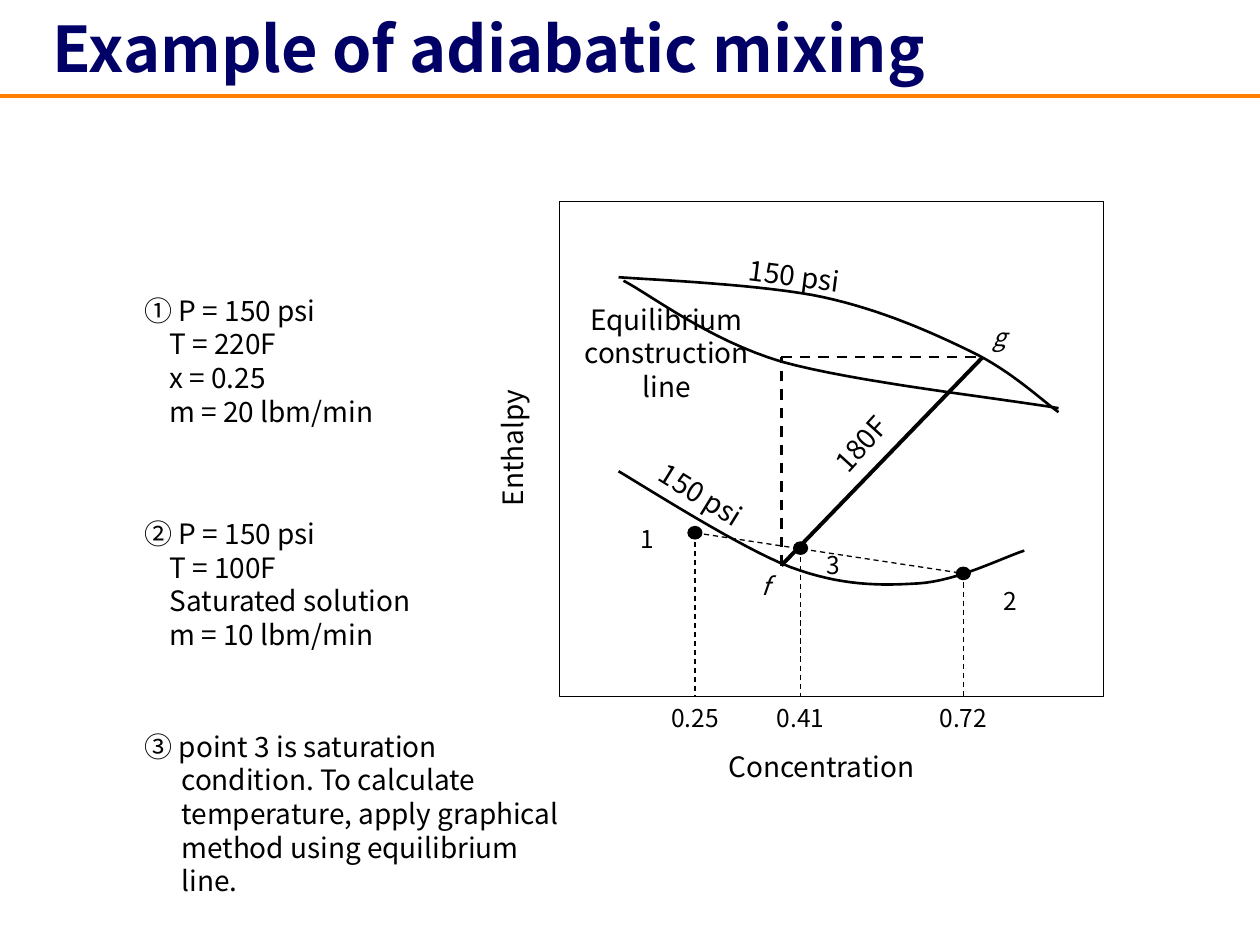
import pptx
import pptx.dml.color
import pptx.enum.dml
import pptx.enum.shapes
import pptx.enum.text
import pptx.oxml
import pptx.oxml.ns
import pptx.util
from pptx.util import Cm

FONT = "Noto Sans CJK KR"
BLACK = pptx.dml.color.RGBColor(0x00, 0x00, 0x00)
NAVY = pptx.dml.color.RGBColor(0x00, 0x00, 0x66)
ORANGE = pptx.dml.color.RGBColor(0xFF, 0x80, 0x00)
LEFT = pptx.enum.text.PP_ALIGN.LEFT
CENTER = pptx.enum.text.PP_ALIGN.CENTER

# All positions and sizes are in centimetres.
TITLE = "Example of adiabatic mixing"
NOTES_LEFT = 2.67
# top, width, hanging indent, lines
NOTES = [
    (5.79, 5.6, 0.5, ["① P = 150 psi", "T = 220F", "x = 0.25", "m = 20 lbm/min"]),
    (10.29, 6.2, 0.5, ["② P = 150 psi", "T = 100F", "Saturated solution",
                       "m = 10 lbm/min"]),
    (14.58, 9.04, 0.74, ["③ point 3 is saturation condition. To calculate temperature, "
                         "apply graphical method using equilibrium line."]),
]

FRAME = (11.28, 4.06, 10.97, 9.98)
FRAME_BOTTOM = FRAME[1] + FRAME[3]

# Each curve: a start point, then two controls and an end per Bezier segment
CURVES = [
    [(12.47, 9.5), (13.03, 9.83), (14.94, 11.05), (15.93, 11.43),
     (16.94, 11.81), (17.75, 11.81), (18.52, 11.76),
     (19.3, 11.71), (20.19, 11.25), (20.65, 11.1)],
    [(12.47, 5.59), (13.16, 5.64), (15.42, 5.74), (16.59, 5.99),
     (17.78, 6.25), (18.8, 6.71), (19.58, 7.09),
     (20.37, 7.47), (20.98, 8.05), (21.34, 8.31)],
    [(12.57, 5.66), (13.11, 5.94), (14.3, 6.86), (15.75, 7.29),
     (17.2, 7.7), (20.17, 8.03), (21.34, 8.23)],
]

# centre of the state point, concentration, number, centre of the number
STATES = [
    ((14.01, 10.74), "0.25", "1", (13.04, 10.86)),
    ((19.42, 11.56), "0.72", "2", (20.36, 12.1)),
    ((16.14, 11.05), "0.41", "3", (16.8, 11.39)),
]
MARKER = (0.28, 0.25)

LIQUID_F = (15.75, 11.4)
VAPOR_G = (19.81, 7.2)
CORNER = (LIQUID_F[0], VAPOR_G[1])

# lines, centre, width, rotation, size, italic
LABELS = [
    (["Concentration"], (16.56, 15.46), 8.74, 0, 16, False),
    (["Enthalpy"], (10.34, 9.03), 8.74, 270, 16, False),
    (["150 psi"], (14.14, 9.97), 2.46, 31.9, 16, False),
    (["150 psi"], (16.01, 5.55), 2.46, 7.3, 16, False),
    (["180F"], (17.35, 8.95), 1.83, 312.3, 16, False),
    (["Equilibrium", "construction", "line"], (13.44, 7.11), 4.22, 0, 16, False),
    (["f"], (15.43, 11.8), 1.14, 0, 14, True),
    (["g"], (20.15, 6.79), 1.14, 0, 14, True),
]

deck = pptx.Presentation()
deck.slide_width, deck.slide_height = Cm(25.4), Cm(19.05)
page = deck.slides.add_slide(deck.slide_layouts[6])


def text_height(line_count, size):
    """Height in cm of a box with its top and bottom insets."""
    return round(line_count * size * 1.2 * 2.54 / 72 + 0.25, 2)


def add_text(lines, left, top, width, height, size, align=LEFT, color=BLACK,
             bold=False, italic=False, hanging=0, rotation=0):
    box = page.shapes.add_textbox(Cm(left), Cm(top), Cm(width), Cm(height))
    box.rotation = rotation
    frame = box.text_frame
    frame.word_wrap = True
    para = frame.paragraphs[0]
    para.alignment = align
    para.line_spacing = pptx.util.Pt(size * 1.2)
    if hanging:
        properties = para._p.get_or_add_pPr()
        properties.set("marL", str(Cm(hanging)))
        properties.set("indent", str(-Cm(hanging)))
    for index, line in enumerate(lines):
        if index:
            para.add_line_break()
        span = para.add_run()
        span.text = line
        span.font.name = FONT
        span.font.size = pptx.util.Pt(size)
        span.font.bold = bold
        span.font.italic = italic
        span.font.color.rgb = color
        east_asian = pptx.oxml.parse_xml(
            f'<a:ea {pptx.oxml.ns.nsdecls("a")} typeface="{FONT}"/>')
        span.font._element.find(pptx.oxml.ns.qn("a:latin")).addnext(east_asian)
    return box


def add_label(lines, center, width, size, rotation=0, italic=False):
    height = text_height(len(lines), size)
    add_text(lines, center[0] - width / 2, center[1] - height / 2, width, height,
             size, CENTER, italic=italic, rotation=rotation)


def add_line(start, end, weight, color=BLACK, dashed=False):
    line = page.shapes.add_connector(pptx.enum.shapes.MSO_CONNECTOR.STRAIGHT,
                                     *map(Cm, start + end))
    line.line.color.rgb = color
    line.line.width = pptx.util.Pt(weight)
    if dashed:
        line.line.dash_style = pptx.enum.dml.MSO_LINE.DASH
    line._element.spPr.append(
        pptx.oxml.parse_xml(f'<a:effectLst {pptx.oxml.ns.nsdecls("a")}/>'))


def style_shape(shape, weight, filled=False):
    shape.shadow.inherit = False
    if filled:
        shape.fill.solid()
        shape.fill.fore_color.rgb = BLACK
    else:
        shape.fill.background()
    shape.line.color.rgb = BLACK
    shape.line.width = pptx.util.Pt(weight)


def bezier_points(nodes, steps=16):
    """Sample a chain of cubic Bezier segments, without its start point."""
    for first in range(0, len(nodes) - 1, 3):
        for step in range(1, steps + 1):
            t = step / steps
            weights = ((1 - t) ** 3, 3 * t * (1 - t) ** 2, 3 * t * t * (1 - t), t ** 3)
            yield tuple(Cm(sum(w * node[axis] for w, node
                               in zip(weights, nodes[first:first + 4])))
                        for axis in (0, 1))


add_line((0, 1.93), (25.4, 1.93), 2, ORANGE)
add_text([TITLE], 0, 0.06, 19.71, 1.9, 36, CENTER, NAVY, bold=True)
for top, width, hanging, lines in NOTES:
    line_count = max(len(lines), 4)
    add_text(lines, NOTES_LEFT, top, width, text_height(line_count, 16), 16,
             hanging=hanging)

plot = page.shapes.add_shape(pptx.enum.shapes.MSO_SHAPE.RECTANGLE, *map(Cm, FRAME))
style_shape(plot, 0.75)
for nodes in CURVES:
    builder = page.shapes.build_freeform(*map(Cm, nodes[0]))
    builder.add_line_segments(list(bezier_points(nodes)), close=False)
    style_shape(builder.convert_to_shape(), 1.5)

add_line(VAPOR_G, LIQUID_F, 2.25)
add_line(LIQUID_F, CORNER, 1.5, dashed=True)
add_line(CORNER, VAPOR_G, 1.5, dashed=True)
add_line(STATES[0][0], STATES[1][0], 0.75, dashed=True)

for (x, y), concentration, number, number_center in STATES:
    add_line((x, y), (x, FRAME_BOTTOM), 0.75, dashed=True)
    marker = page.shapes.add_shape(
        pptx.enum.shapes.MSO_SHAPE.FLOWCHART_CONNECTOR,
        Cm(x - MARKER[0] / 2), Cm(y - MARKER[1] / 2), *map(Cm, MARKER))
    style_shape(marker, 0.75, filled=True)
    add_label([concentration], (x, FRAME_BOTTOM + 0.42), 1.8, 14)
    add_label([number], number_center, 1.14, 14)

for lines, center, width, rotation, size, italic in LABELS:
    add_label(lines, center, width, size, rotation, italic)

deck.save("out.pptx")
